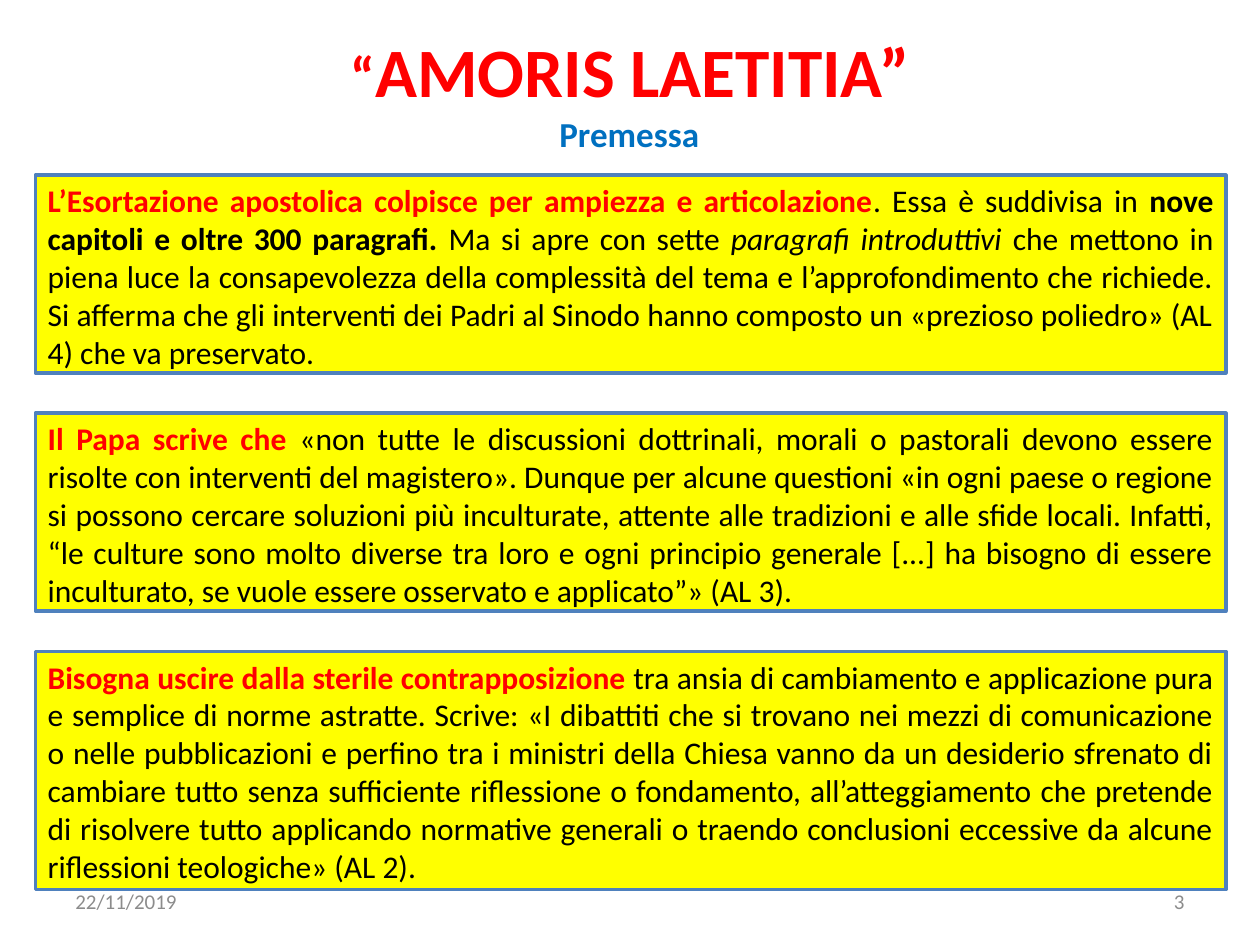
"""Build the "Amoris Laetitia" slide: heading, three boxed passages and footer."""
import pptx
import pptx.dml.color
import pptx.enum.shapes
import pptx.enum.text
import pptx.util

Inches = pptx.util.Inches
ALIGN = pptx.enum.text.PP_ALIGN
ANCHOR = pptx.enum.text.MSO_ANCHOR

COLOURS = {
    "red": "FF0000",
    "blue": "0070C0",
    "black": "000000",
    "grey": "8C8C8C",
    "yellow": "FFFF00",
    "border": "4F81BD",
}
LEFT, WIDTH = 0.28, 9.45
KEY = {"colour": "red", "bold": True}

TITLE = [("“", {"size": 32.4}), ("AMORIS LAETITIA”", {})]
PASSAGES = [
    (1.39, 1.57, [
        ("L’Esortazione apostolica colpisce per ampiezza e articolazione", KEY),
        (". Essa è suddivisa in ", {}),
        ("nove capitoli e oltre 300 paragrafi.", {"bold": True}),
        (" Ma si apre con sette ", {}),
        ("paragrafi introduttivi ", {"italic": True}),
        ("che mettono in piena luce la consapevolezza della complessità del tema "
         "e l’approfondimento che richiede. Si afferma che gli interventi dei Padri "
         "al Sinodo hanno composto un «prezioso poliedro» (AL 4) che va preservato.", {}),
    ]),
    (3.28, 1.57, [
        ("Il Papa scrive che ", KEY),
        ("«non tutte le discussioni dottrinali, morali o pastorali devono essere "
         "risolte con interventi del magistero». Dunque per alcune questioni «in ogni "
         "paese o regione si possono cercare soluzioni più inculturate, attente alle "
         "tradizioni e alle sfide locali. Infatti, “le culture sono molto diverse tra "
         "loro e ogni principio generale [...] ha bisogno di essere inculturato, se "
         "vuole essere osservato e applicato”» (AL 3).", {}),
    ]),
    (5.17, 1.89, [
        ("Bisogna uscire dalla sterile contrapposizione ", KEY),
        ("tra ansia di cambiamento e applicazione pura e semplice di norme astratte. "
         "Scrive: «I dibattiti che si trovano nei mezzi di comunicazione o nelle "
         "pubblicazioni e perfino tra i ministri della Chiesa vanno da un desiderio "
         "sfrenato di cambiare tutto senza sufficiente riflessione o fondamento, "
         "all’atteggiamento che pretende di risolvere tutto applicando normative "
         "generali o traendo conclusioni eccessive da alcune riflessioni teologiche» "
         "(AL 2).", {}),
    ]),
]
FOOTER = [("22/11/2019", 0.5, ALIGN.LEFT), ("3", 7.17, ALIGN.RIGHT)]


def rgb(name):
    return pptx.dml.color.RGBColor.from_string(COLOURS[name])


def write(holder, runs, align=ALIGN.LEFT, anchor=ANCHOR.TOP, **base):
    frame = holder.text_frame
    frame.word_wrap = True
    frame.vertical_anchor = anchor
    paragraph = frame.paragraphs[0]
    paragraph.alignment = align
    for words, changes in runs:
        style = {"size": 18, "colour": "black", "bold": False, "italic": False,
                 **base, **changes}
        run = paragraph.add_run()
        run.text = words
        run.font.name = "Calibri"
        run.font.size = pptx.util.Pt(style["size"])
        run.font.bold = style["bold"]
        run.font.italic = style["italic"]
        run.font.color.rgb = rgb(style["colour"])


def main():
    deck = pptx.Presentation()
    deck.slide_width, deck.slide_height = Inches(10), Inches(7.5)
    shapes = deck.slides.add_slide(deck.slide_layouts[6]).shapes

    def label(left, top, width, height, runs, **style):
        box = shapes.add_textbox(*map(Inches, (left, top, width, height)))
        write(box, runs, **style)

    label(LEFT, 0.32, WIDTH, 0.47, TITLE, align=ALIGN.CENTER, anchor=ANCHOR.MIDDLE,
          size=39.6, colour="red", bold=True)
    label(1.06, 0.84, 7.87, 0.44, [("Premessa", {})], align=ALIGN.CENTER,
          size=20, colour="blue", bold=True)
    for words, left, align in FOOTER:
        label(left, 6.95, 2.33, 0.4, [(words, {})], align=align,
              anchor=ANCHOR.MIDDLE, size=12, colour="grey")

    for top, height, runs in PASSAGES:
        passage = shapes.add_shape(pptx.enum.shapes.MSO_SHAPE.RECTANGLE,
                                   *map(Inches, (LEFT, top, WIDTH, height)))
        passage.shadow.inherit = False
        passage.fill.solid()
        passage.fill.fore_color.rgb = rgb("yellow")
        passage.line.color.rgb = rgb("border")
        passage.line.width = pptx.util.Pt(2)
        write(passage, runs, align=ALIGN.JUSTIFY)

    deck.save("out.pptx")


if __name__ == "__main__":
    main()
